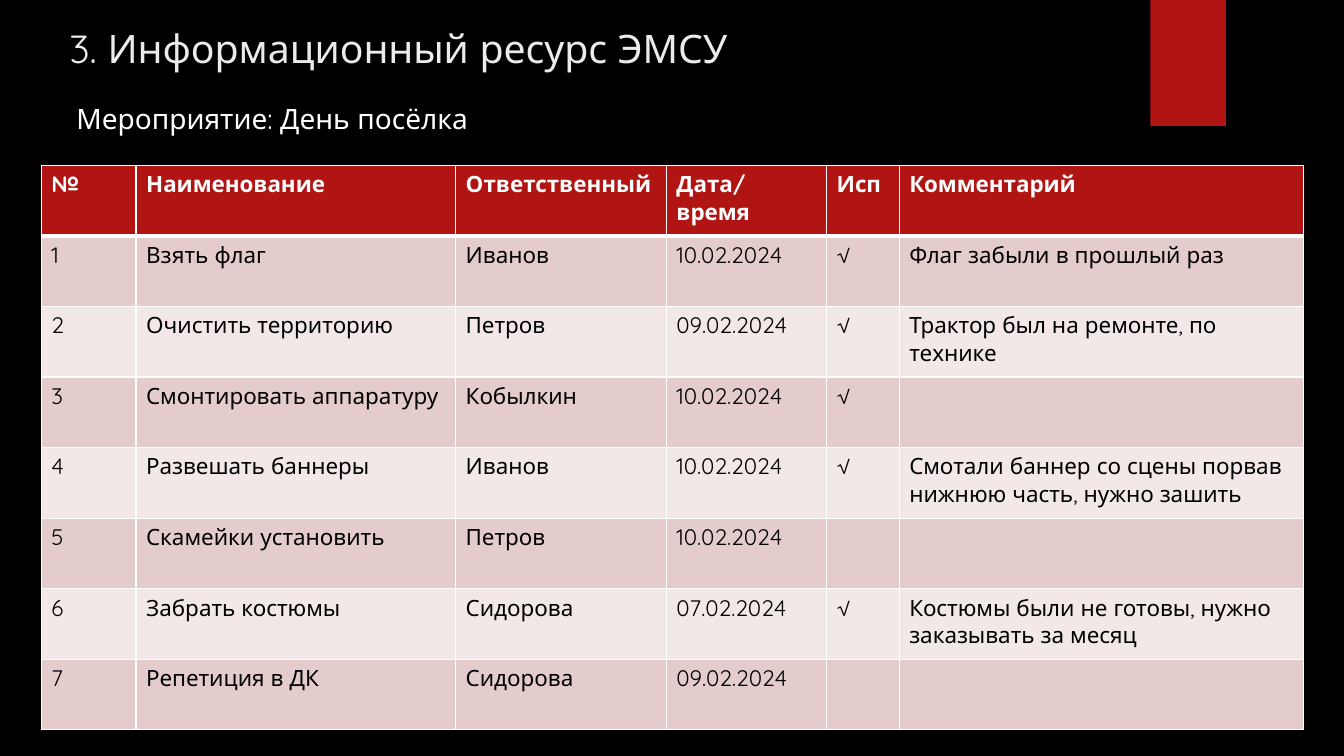
from lxml import etree
from pptx import Presentation
from pptx.dml.color import RGBColor
from pptx.enum.shapes import MSO_SHAPE
from pptx.enum.text import MSO_ANCHOR
from pptx.oxml.ns import qn
from pptx.util import Inches, Pt

RECTANGLE = MSO_SHAPE.RECTANGLE
TOP = MSO_ANCHOR.TOP

BLACK = RGBColor(0x00, 0x00, 0x00)
WHITE = RGBColor(0xFF, 0xFF, 0xFF)
TITLE_GREY = RGBColor(0xEB, 0xEB, 0xEB)
RED = RGBColor(0xB0, 0x15, 0x13)
PINK = RGBColor(0xE4, 0xCC, 0xCC)
PALE_PINK = RGBColor(0xF2, 0xE8, 0xE7)

COLUMN_WIDTHS = [0.94, 3.17, 2.09, 1.59, 0.72, 4.01]
ROW_HEIGHT = 0.7
TASKS = [
    ["№", "Наименование", "Ответственный", "Дата/время", "Исп", "Комментарий"],
    ["1", "Взять флаг", "Иванов", "10.02.2024", "√", "Флаг забыли в прошлый раз"],
    ["2", "Очистить территорию", "Петров", "09.02.2024", "√",
     "Трактор был на ремонте, по технике"],
    ["3", "Смонтировать аппаратуру", "Кобылкин", "10.02.2024", "√", ""],
    ["4", "Развешать баннеры", "Иванов", "10.02.2024", "√",
     "Смотали баннер со сцены порвав нижнюю часть, нужно зашить"],
    ["5", "Скамейки установить", "Петров", "10.02.2024", "", ""],
    ["6", "Забрать костюмы", "Сидорова", "07.02.2024", "√",
     "Костюмы были не готовы, нужно заказывать за месяц"],
    ["7", "Репетиция в ДК", "Сидорова", "09.02.2024", "", ""],
]


class SlideBuilder:
    font = "Quicksand"
    cell_size = 16

    def __init__(self, slide):
        self.s = slide
        fill = slide.background.fill
        fill.solid()
        fill.fore_color.rgb = BLACK

    def style(self, p, size, color, bold=False):
        p.font.name = self.font
        p.font.size = Pt(size)
        p.font.bold = bold
        p.font.color.rgb = color
        for r in p.runs:
            r.font.name = self.font
            r.font.size = Pt(size)
            r.font.bold = bold
            r.font.color.rgb = color

    def bar(self, x, y, w, h, color):
        sp = self.s.shapes.add_shape(
            RECTANGLE, Inches(x), Inches(y), Inches(w), Inches(h))
        sp.shadow.inherit = False
        sp.fill.solid()
        sp.fill.fore_color.rgb = color
        sp.line.fill.background()

    def text(self, x, y, w, h, text, size, color):
        sp = self.s.shapes.add_textbox(Inches(x), Inches(y), Inches(w), Inches(h))
        tf = sp.text_frame
        tf.word_wrap = True
        tf.vertical_anchor = TOP
        tf.text = text
        self.style(tf.paragraphs[0], size, color)

    def borders(self, cell, top, bottom):
        tcPr = cell._tc.get_or_add_tcPr()
        sides = [("a:lnL", 1), ("a:lnR", 1), ("a:lnT", top), ("a:lnB", bottom)]
        for i, (tag, width) in enumerate(sides):
            ln = etree.Element(qn(tag), w=str(Pt(width)))
            fill = etree.SubElement(ln, qn("a:solidFill"))
            etree.SubElement(fill, qn("a:srgbClr"), val=str(WHITE))
            tcPr.insert(i, ln)

    def table(self, x, y, widths, row_height, rows):
        frame = self.s.shapes.add_table(
            len(rows), len(widths), Inches(x), Inches(y),
            Inches(sum(widths)), Inches(row_height * len(rows)))
        table = frame.table
        for column, width in zip(table.columns, widths):
            column.width = Inches(width)
        for i, values in enumerate(rows):
            table.rows[i].height = Inches(row_height)
            header = i == 0
            color = RED if header else PINK if i % 2 else PALE_PINK
            for j, value in enumerate(values):
                cell = table.cell(i, j)
                cell.text = value
                cell.fill.solid()
                cell.fill.fore_color.rgb = color
                self.style(cell.text_frame.paragraphs[0], self.cell_size,
                           WHITE if header else BLACK, header)
                # The header is set off by a thicker rule
                self.borders(cell, 3 if i == 1 else 1, 3 if header else 1)


def main():
    prs = Presentation()
    prs.slide_width = Inches(13.33)
    prs.slide_height = Inches(7.5)
    page = SlideBuilder(prs.slides.add_slide(prs.slide_layouts[6]))

    # Red tab at the top edge
    page.bar(11.41, 0, 0.75, 1.25, RED)

    # Headings
    page.text(0.59, 0.19, 10.29, 0.71, "3. Информационный ресурс ЭМСУ", 28, TITLE_GREY)
    page.text(0.66, 0.96, 6.56, 0.44, "Мероприятие: День посёлка", 20, WHITE)

    # Task list
    page.table(0.41, 1.64, COLUMN_WIDTHS, ROW_HEIGHT, TASKS)

    prs.save("out.pptx")


if __name__ == "__main__":
    main()
